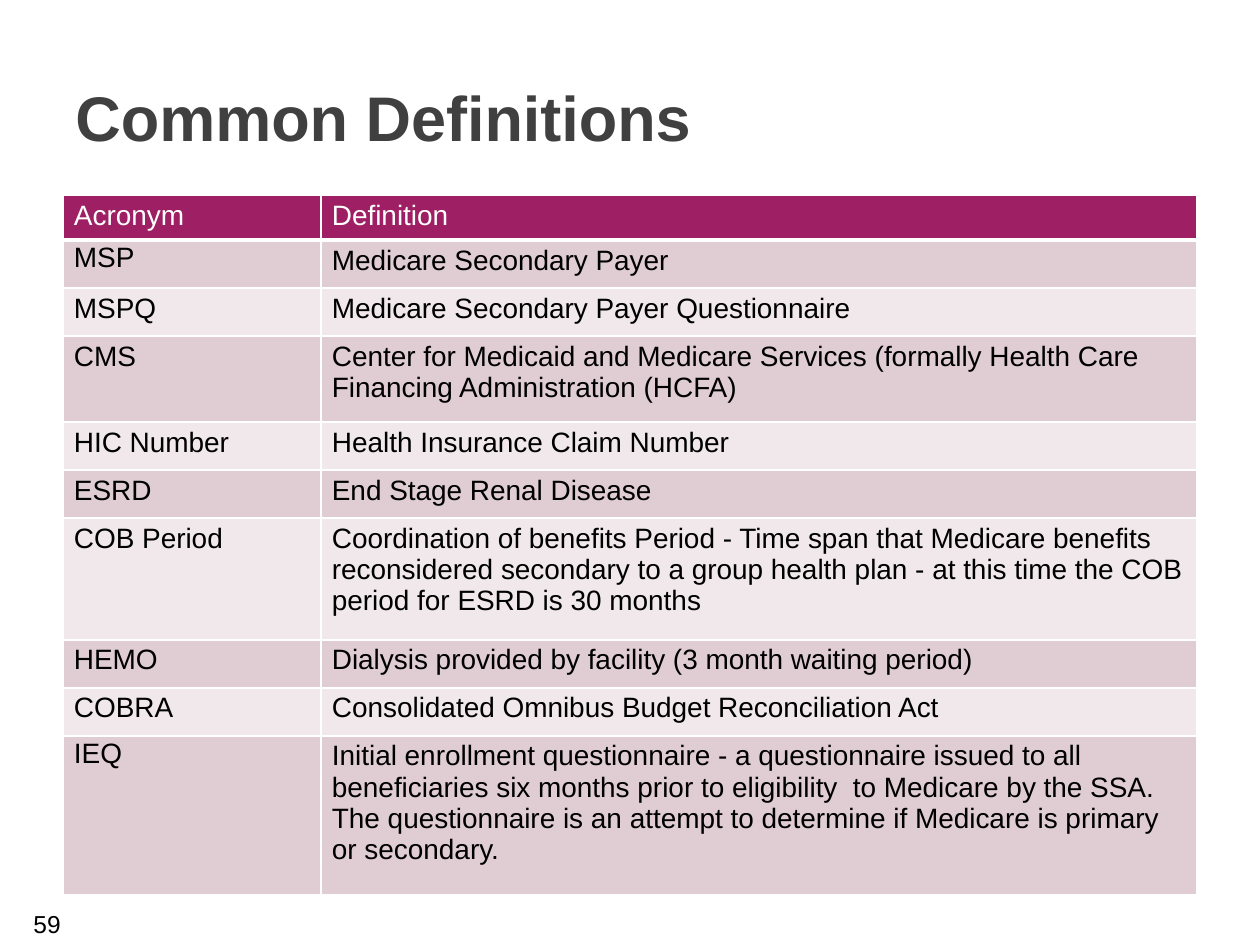
from lxml.etree import SubElement
from pptx import Presentation
from pptx.dml.color import RGBColor
from pptx.enum.text import MSO_ANCHOR as Anchor
from pptx.oxml.ns import qn
from pptx.util import Pt

PX = 914400 / 126
THEME = {
    "font": "Arial",
    "title": "404040",
    "header": "9E1F63",
    "bands": ("DFCDD3", "F0E8EA"),
    "white": "FFFFFF",
    "black": "000000",
    "title_size": 36,
    "table_size": 16,
    "number_size": 14,
}


def px(value):
    return round(value * PX)


def write(frame, text, size, color, bold=False, line_spacing=None, hanging=0):
    frame.word_wrap = True
    paragraph = frame.paragraphs[0]
    paragraph.line_spacing = line_spacing
    if hanging:
        properties = paragraph._p.get_or_add_pPr()
        properties.set("marL", str(px(hanging)))
        properties.set("indent", str(-px(hanging)))
    run = paragraph.add_run()
    run.text = text
    run.font.name = THEME["font"]
    run.font.size = Pt(size)
    run.font.bold = bold
    run.font.color.rgb = RGBColor.from_string(color)


presentation = Presentation()
presentation.slide_width = px(1260)
presentation.slide_height = px(945)
slide = presentation.slides.add_slide(presentation.slide_layouts[6])

number = slide.shapes.add_textbox(px(21), px(903), px(294), px(42))
write(number.text_frame, "59", THEME["number_size"], THEME["black"])

title = slide.shapes.add_textbox(px(63), px(38), px(1134), px(157))
title.text_frame.vertical_anchor = Anchor.MIDDLE
write(title.text_frame, "Common Definitions", THEME["title_size"], THEME["title"], bold=True)

rows = [
    (45, "Acronym", "Definition"),
    (48, "MSP", "Medicare Secondary Payer"),
    (48, "MSPQ", "Medicare Secondary Payer Questionnaire"),
    (86, "CMS", "Center for Medicaid and Medicare Services (formally Health Care "
                "Financing Administration (HCFA)"),
    (48, "HIC Number", "Health Insurance Claim Number"),
    (48, "ESRD", "End Stage Renal Disease"),
    (122, "COB Period", "Coordination of benefits Period - Time span that Medicare benefits "
                        "reconsidered secondary to a group health plan - at this time the COB "
                        "period for ESRD is 30 months"),
    (48, "HEMO", "Dialysis provided by facility (3 month waiting period)"),
    (48, "COBRA", "Consolidated Omnibus Budget Reconciliation Act"),
    (159, "IEQ", "Initial enrollment questionnaire - a questionnaire issued to all "
                 "beneficiaries six months prior to eligibility  to Medicare by the SSA.  "
                 "The questionnaire is an attempt to determine if Medicare is primary "
                 "or secondary."),
]
column_widths = (258, 876)
table_height = sum(row[0] for row in rows)
table = slide.shapes.add_table(
    len(rows), len(column_widths), px(63), px(195), px(sum(column_widths)), px(table_height)
).table
for column, width in zip(table.columns, column_widths):
    column.width = px(width)

for row_index, (height, *texts) in enumerate(rows):
    table.rows[row_index].height = px(height)
    is_header = row_index == 0
    fill_color = THEME["header"] if is_header else THEME["bands"][(row_index - 1) % 2]
    text_color = THEME["white"] if is_header else THEME["black"]
    for column_index, text in enumerate(texts):
        cell = table.cell(row_index, column_index)
        cell.margin_left = cell.margin_right = px(11)
        cell.margin_top = cell.margin_bottom = px(5)
        is_hanging = column_index == 0 and text in ("MSP", "IEQ")
        write(cell.text_frame, text, THEME["table_size"], text_color,
              line_spacing=0.9 if is_hanging else None, hanging=30 if is_hanging else 0)
        cell_properties = cell._tc.get_or_add_tcPr()
        for side in ("lnL", "lnR", "lnT", "lnB"):
            is_thick = (row_index, side) in ((0, "lnB"), (1, "lnT"))
            border = SubElement(cell_properties, qn(f"a:{side}"), w=str(Pt(3 if is_thick else 1)))
            border_fill = SubElement(border, qn("a:solidFill"))
            SubElement(border_fill, qn("a:srgbClr"), val=THEME["white"])
        cell.fill.solid()
        cell.fill.fore_color.rgb = RGBColor.from_string(fill_color)

presentation.save("out.pptx")
